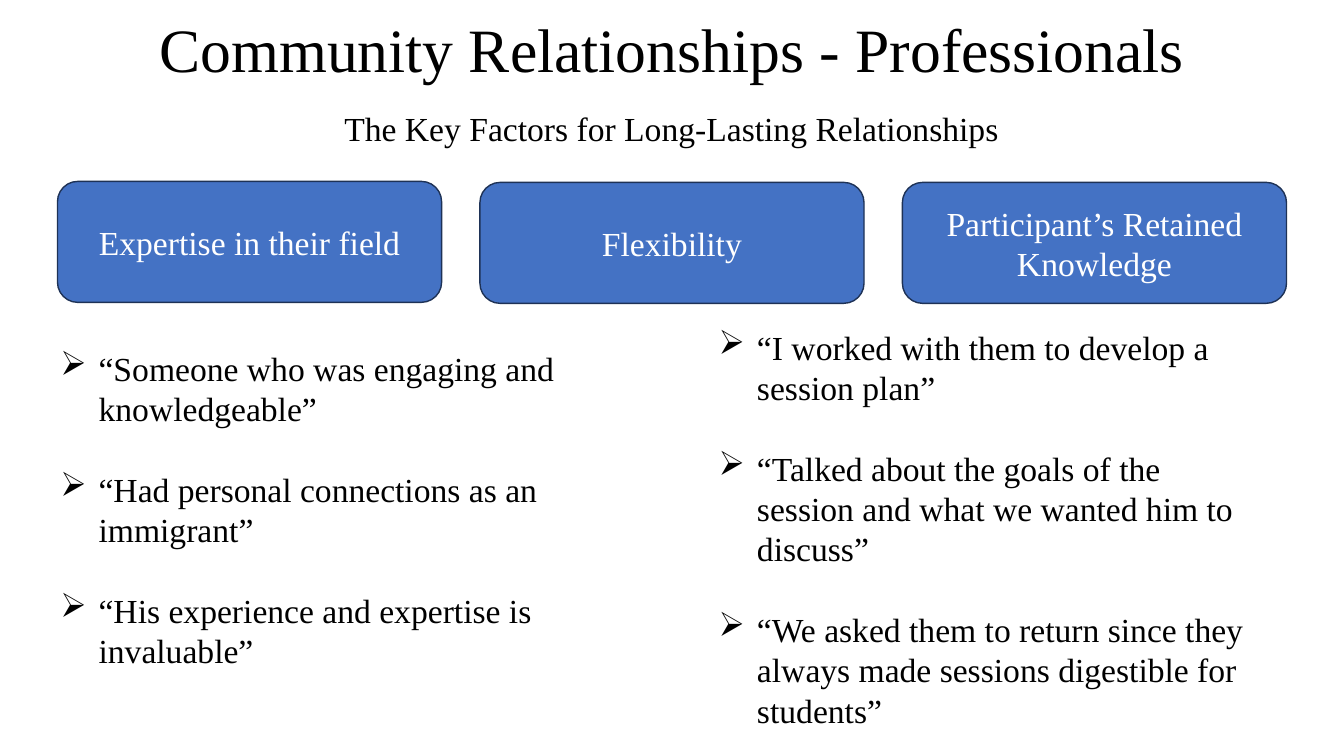
from lxml.etree import SubElement
from pptx import Presentation
from pptx.dml.color import RGBColor
from pptx.enum.shapes import MSO_SHAPE
from pptx.enum.text import MSO_ANCHOR, PP_ALIGN
from pptx.oxml.ns import qn
from pptx.util import Inches, Pt

FONT = "Times New Roman"
COLORS = {"text": "000000", "card": "4472C4", "edge": "1E3256", "label": "FFFFFF"}
FACTORS = [
    ("Expertise in their field", 1.8),
    ("Flexibility", 1.81),
    ("Participant’s Retained Knowledge", 1.81),
]
EXPERT = [
    "“Someone who was engaging and knowledgeable”",
    "“Had personal connections as an immigrant”",
    "“His experience and expertise is invaluable”",
]
FLEX = [
    "“I worked with them to develop a session plan”",
    "“Talked about the goals of the session and what we wanted him to discuss”",
    "“We asked them to return since they always made sessions digestible for students”",
]


def color(name):
    """Return the named colour."""
    return RGBColor.from_string(COLORS[name])


def add_run(para, text, size=24, shade="text"):
    """Add one styled run to a paragraph."""
    run = para.add_run()
    run.text = text
    run.font.name = FONT
    run.font.size = Pt(size)
    run.font.color.rgb = color(shade)


def add_frame(slide, left, top, width, height):
    """Add a wrapping text box and return its frame."""
    box = slide.shapes.add_textbox(Inches(left), Inches(top), Inches(width), Inches(height))
    box.text_frame.word_wrap = True
    return box.text_frame


def add_head(slide, text, size, left, top, width):
    """Add a centred heading."""
    frame = add_frame(slide, left, top, width, 1.45)
    frame.vertical_anchor = MSO_ANCHOR.MIDDLE
    para = frame.paragraphs[0]
    para.alignment = PP_ALIGN.CENTER
    para.line_spacing = 0.9
    add_run(para, text, size)


def add_card(slide, text, left, top):
    """Add a rounded card with a centred label."""
    card = slide.shapes.add_shape(
        MSO_SHAPE.ROUNDED_RECTANGLE, Inches(left), Inches(top), Inches(3.81), Inches(1.2))
    card.shadow.inherit = False
    card.fill.solid()
    card.fill.fore_color.rgb = color("card")
    card.line.color.rgb = color("edge")
    card.line.width = Pt(1)
    frame = card.text_frame
    frame.word_wrap = True
    frame.vertical_anchor = MSO_ANCHOR.MIDDLE
    para = frame.paragraphs[0]
    para.alignment = PP_ALIGN.CENTER
    add_run(para, text, shade="label")


def add_quotes(slide, quotes, left, top, height):
    """Add a list of quotes with arrow bullets."""
    frame = add_frame(slide, left, top, 5.96, height)
    for index, quote in enumerate(quotes):
        para = frame.add_paragraph() if index else frame.paragraphs[0]
        para.level = 1
        para.space_after = Pt(28.8)
        props = para._p.get_or_add_pPr()
        props.set("marL", str(Inches(0.88)))
        props.set("indent", str(Inches(-0.38)))
        SubElement(props, qn("a:buFont"), typeface="Wingdings")
        SubElement(props, qn("a:buChar"), char="Ø")
        add_run(para, quote)


def main():
    """Build and save the slide."""
    deck = Presentation()
    deck.slide_width, deck.slide_height = Inches(13.33), Inches(7.5)
    slide = deck.slides.add_slide(deck.slide_layouts[6])
    add_head(slide, "Community Relationships - Professionals", 44, 0.92, -0.2, 11.5)
    add_head(slide, "The Key Factors for Long-Lasting Relationships", 24, 0.12, 0.57, 13.08)
    for index, (text, top) in enumerate(FACTORS):
        add_card(slide, text, 0.57 + index * 4.19, top)
    add_quotes(slide, EXPERT, 0, 3.4, 3.74)
    add_quotes(slide, FLEX, 6.53, 3.19, 4.55)
    deck.save("out.pptx")


if __name__ == "__main__":
    main()
